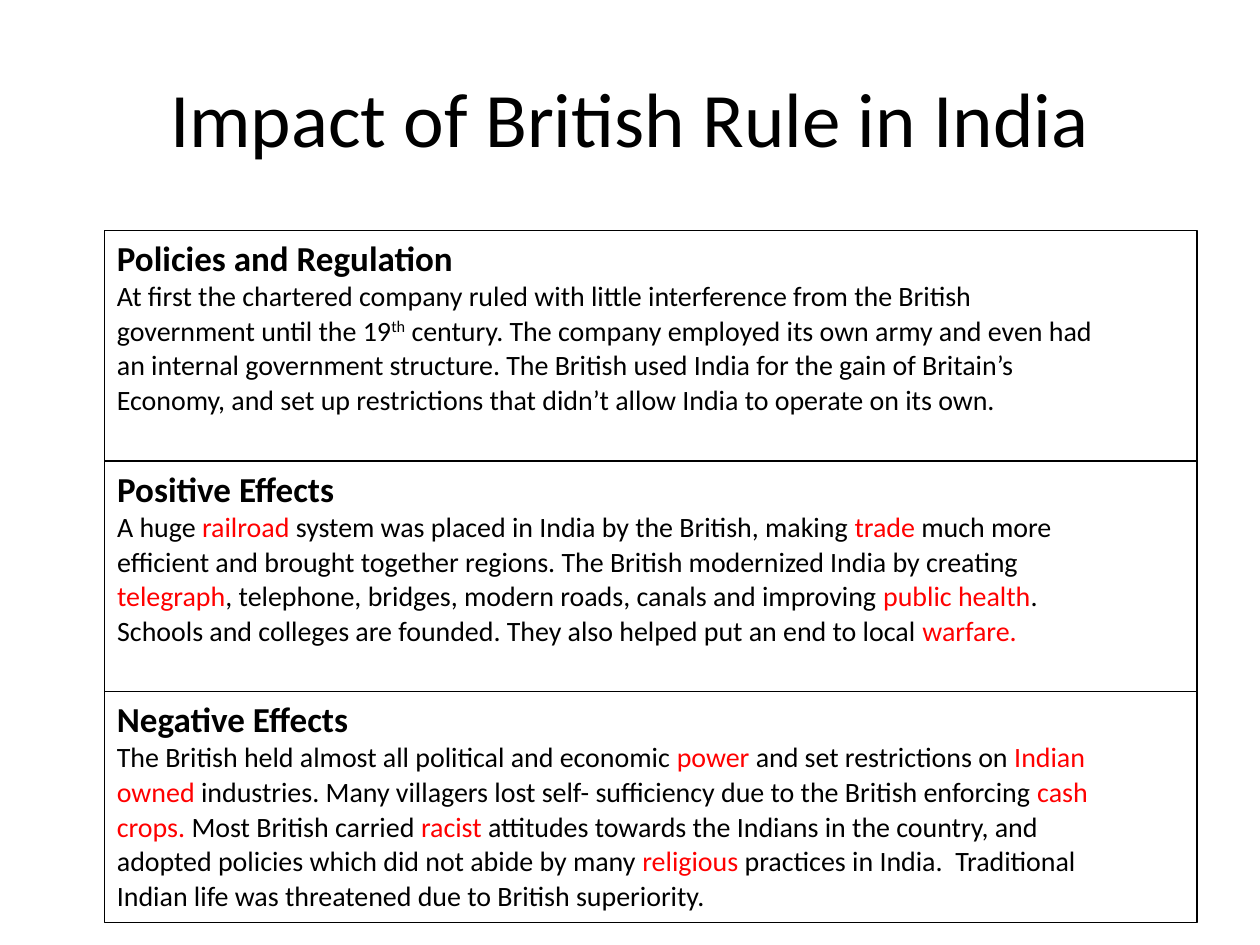
from pptx import Presentation
from pptx.dml.color import RGBColor
from pptx.enum.shapes import MSO_SHAPE
from pptx.enum.text import MSO_ANCHOR, MSO_AUTO_SIZE, PP_ALIGN
from pptx.oxml.ns import qn
from pptx.util import Inches, Pt

RECTANGLE = MSO_SHAPE.RECTANGLE
TOP, MIDDLE = MSO_ANCHOR.TOP, MSO_ANCHOR.MIDDLE
LEFT, CENTER = PP_ALIGN.LEFT, PP_ALIGN.CENTER
NO_AUTOFIT = MSO_AUTO_SIZE.NONE

BLACK = RGBColor(0x00, 0x00, 0x00)
RED = RGBColor(0xFF, 0x00, 0x00)
FONT = "Calibri"

# Content: each line is a list of (text, style) runs
PLAIN, KEY, SUPER = "plain", "key", "super"
TITLE = "Impact of British Rule in India"
POLICIES = ("Policies and Regulation", [
    [("At first the chartered company ruled with little interference from the British", PLAIN)],
    [("government until the 19", PLAIN), ("th", SUPER),
     (" century. The company employed its own army and even had", PLAIN)],
    [("an internal government structure. The British used India for the gain of Britain’s", PLAIN)],
    [("Economy, and set up restrictions that didn’t allow India to operate on its own.", PLAIN)],
])
POSITIVE = ("Positive Effects", [
    [("A huge ", PLAIN), ("railroad", KEY),
     (" system was placed in India by the British, making ", PLAIN),
     ("trade", KEY), (" much more", PLAIN)],
    [("efficient and brought together regions. The British modernized India by creating", PLAIN)],
    [("telegraph", KEY), (", telephone, bridges, modern roads, canals and improving ", PLAIN),
     ("public health", KEY), (".", PLAIN)],
    [("Schools and colleges are founded. They also helped put an end to local ", PLAIN),
     ("warfare.", KEY)],
])
NEGATIVE = ("Negative Effects", [
    [("The British held almost all political and economic ", PLAIN), ("power ", KEY),
     ("and set restrictions on", PLAIN), (" Indian", KEY)],
    [("owned", KEY),
     (" industries. Many villagers lost self- sufficiency due to the British enforcing ", PLAIN),
     ("cash", KEY)],
    [("crops. ", KEY), ("Most British carried ", PLAIN), ("racist", KEY),
     (" attitudes towards the Indians in the country, and", PLAIN)],
    [("adopted policies which did not abide by many ", PLAIN), ("religious ", KEY),
     ("practices in India.  Traditional", PLAIN)],
    [("Indian life was threatened due to British superiority.", PLAIN)],
])

# Stacked boxes share edges
BOX_LEFT, BOX_TOP, BOX_WIDTH, BOX_HEIGHT = 0.83, 1.83, 8.67, 1.83
HANGING = Inches(0.38)


def place(shape, left, top, width, height):
    shape.left, shape.top = Inches(left), Inches(top)
    shape.width, shape.height = Inches(width), Inches(height)


def add_run(paragraph, text, size, bold=False, style=PLAIN):
    run = paragraph.add_run()
    run.text = text
    font = run.font
    font.name, font.size, font.bold = FONT, Pt(size), bold
    font.color.rgb = RED if style == KEY else BLACK
    if style == SUPER:
        font._element.set("baseline", "30000")


def format_paragraph(paragraph, space_after=0):
    paragraph.alignment = LEFT
    paragraph.space_before = Pt(0)
    paragraph.space_after = Pt(space_after)
    properties = paragraph._p.get_or_add_pPr()
    properties.set("marL", str(HANGING))
    properties.set("indent", str(-HANGING))
    properties.append(properties.makeelement(qn("a:buNone"), {}))


def fill_section(shape, row, section):
    heading, lines = section
    place(shape, BOX_LEFT, BOX_TOP + row * BOX_HEIGHT, BOX_WIDTH, BOX_HEIGHT)
    shape.fill.background()
    shape.line.color.rgb = BLACK
    shape.line.width = Pt(0.75)
    frame = shape.text_frame
    frame.word_wrap = True
    frame.auto_size = NO_AUTOFIT
    frame.vertical_anchor = TOP

    paragraph = frame.paragraphs[0]
    format_paragraph(paragraph)
    add_run(paragraph, heading, 20, bold=True)
    for line in lines:
        paragraph = frame.add_paragraph()
        format_paragraph(paragraph, space_after=0.6)
        for text, style in line:
            add_run(paragraph, text, 16, style=style)


def add_box(slide):
    box = slide.shapes.add_shape(RECTANGLE, 0, 0, 0, 0)
    box.shadow.inherit = False
    return box


def main():
    presentation = Presentation()
    presentation.slide_width, presentation.slide_height = Inches(10), Inches(7.5)
    slide = presentation.slides.add_slide(presentation.slide_layouts[1])

    # Title
    title = slide.shapes.title
    place(title, 0.5, 0.3, 9, 1.25)
    title.text_frame.vertical_anchor = MIDDLE
    title.text_frame.paragraphs[0].alignment = CENTER
    add_run(title.text_frame.paragraphs[0], TITLE, 44)

    # Three sections; the middle one is the body placeholder
    fill_section(slide.placeholders[1], 1, POSITIVE)
    fill_section(add_box(slide), 2, NEGATIVE)
    fill_section(add_box(slide), 0, POLICIES)

    presentation.save("out.pptx")


if __name__ == "__main__":
    main()
